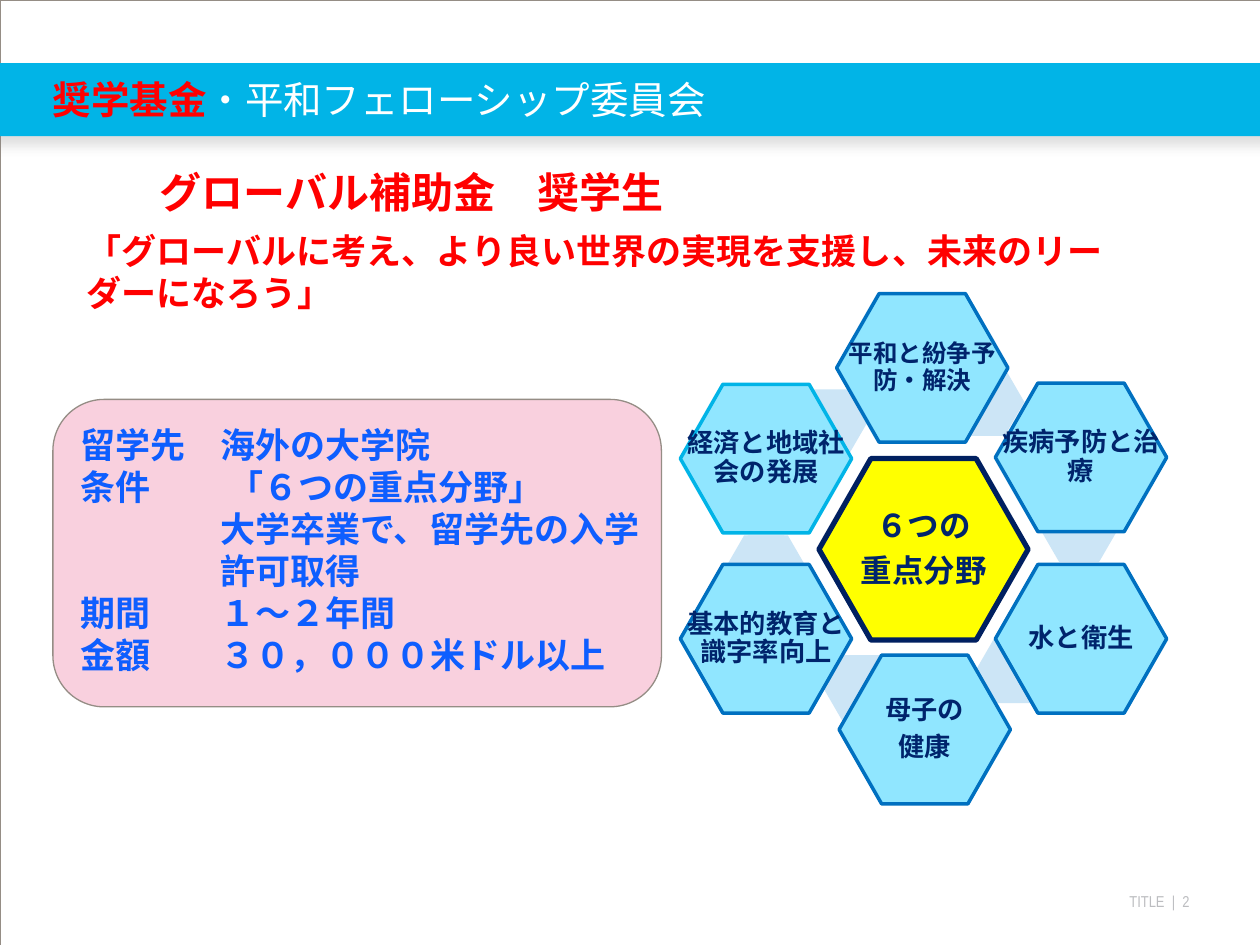
from lxml.etree import SubElement
from pptx import Presentation
from pptx.dml.color import RGBColor
from pptx.enum.shapes import MSO_SHAPE
from pptx.enum.text import MSO_ANCHOR, PP_ALIGN
from pptx.oxml.ns import qn
from pptx.util import Inches, Pt

LABEL_WIDTH = 1.11
LINK_SIZE = (0.63, 0.54)
AREA_SIZE = (1.36, 1.18)
LINKS = [(6.25, 3.09), (5.75, 4.25), (7.5, 2.92), (8.25, 3.92),
         (7.75, 5.04), (6.54, 5.2), (5.78, 4.25)]
AREAS = [
    (6.64, 2.33, ["平和と紛争予防・解決"], 14, "0070C0"),
    (7.9, 3.04, ["疾病予防と治療"], 15, "0070C0"),
    (7.9, 4.48, ["水と衛生"], 15, "0070C0"),
    (6.66, 5.2, ["母子の", "健康"], 15, "0070C0"),
    (5.4, 4.48, ["基本的教育と識字率向上"], 15, "0070C0"),
    (5.4, 3.05, ["経済と地域社会の発展"], 15, "01B4E7"),
]
DETAILS = [
    "留学先\t海外の大学院",
    "条件\t 「６つの重点分野」",
    "\t大学卒業で、留学先の入学",
    "\t許可取得",
    "期間\t１～２年間",
    "金額\t３０，０００米ドル以上",
]


def rgb(color):
    """Turn a hex string into a colour."""
    return RGBColor.from_string(color)


def add_shape(s, kind, box, fill=None, line=None, width=1, adj=None):
    """Add a preset shape without a theme shadow."""
    sp = s.shapes.add_shape(kind, *map(Inches, box))
    sp.shadow.inherit = False
    if fill:
        sp.fill.solid()
        sp.fill.fore_color.rgb = rgb(fill)
    else:
        sp.fill.background()
    if line:
        sp.line.color.rgb = rgb(line)
        sp.line.width = Pt(width)
    else:
        sp.line.fill.background()
    if adj is not None:
        sp.adjustments[0] = adj
    return sp


def set_frame(tf, insets=(0, 0, 0, 0), anchor=MSO_ANCHOR.TOP):
    """Set wrapping, insets (left, top, right, bottom) and anchor."""
    tf.word_wrap = True
    tf.vertical_anchor = anchor
    tf.margin_left, tf.margin_top, tf.margin_right, tf.margin_bottom = map(Inches, insets)


def add_run(p, text, size, color, bold=True, font="Arial"):
    """Add one formatted run to a paragraph."""
    r = p.add_run()
    r.text = text
    r.font.size = Pt(size)
    r.font.name = font
    r.font.bold = bold
    r.font.color.rgb = rgb(color)


def add_text(s, box, runs, align=PP_ALIGN.LEFT, **frame):
    """Add a one-paragraph text box from run arguments."""
    tf = s.shapes.add_textbox(*map(Inches, box)).text_frame
    set_frame(tf, **frame)
    p = tf.paragraphs[0]
    p.alignment = align
    for run in runs:
        add_run(p, *run)


def add_paragraphs(tf, count):
    """Return the first paragraph of a frame followed by new ones."""
    return [tf.paragraphs[0]] + [tf.add_paragraph() for _ in range(count - 1)]


def add_hexagon(s, box, lines, size, fill, line, width):
    """Add a hexagon with a full-width centred label."""
    add_shape(s, MSO_SHAPE.HEXAGON, box, fill, line, width, 0.286)
    tf = s.shapes.add_textbox(*map(Inches, box)).text_frame
    set_frame(tf, (0.02,) * 4, MSO_ANCHOR.MIDDLE)
    for p, text in zip(add_paragraphs(tf, len(lines)), lines):
        p.alignment = PP_ALIGN.CENTER
        p.line_spacing = 0.9
        p.space_after = Pt(size * 0.35)
        add_run(p, text, size, "00246C", font="Calibri")


def add_band(s):
    """Add the title band with its soft shadow."""
    sp = add_shape(s, MSO_SHAPE.RECTANGLE, (-0.08, 0.5, 10.17, 0.58), "01B4E7")
    effects = sp._element.spPr.find(qn("a:effectLst"))
    shadow = SubElement(effects, qn("a:outerShdw"), blurRad=str(Pt(7)),
                        dist=str(Pt(4.8)), dir="5400000", rotWithShape="0")
    color = SubElement(shadow, qn("a:srgbClr"), val="808080")
    SubElement(color, qn("a:alpha"), val="25000")


def add_details(s):
    """Add the rounded card of labels and values on a tab stop."""
    sp = add_shape(s, MSO_SHAPE.ROUNDED_RECTANGLE, (0.42, 3.17, 4.83, 2.44),
                   "F9D0DE", "958D85", 0.75)
    tf = sp.text_frame
    set_frame(tf, (0.1, 0.05, 0, 0.11), MSO_ANCHOR.MIDDLE)
    for p, text in zip(add_paragraphs(tf, len(DETAILS)), DETAILS):
        p.alignment = PP_ALIGN.LEFT
        indent = Inches(LABEL_WIDTH)
        pPr = p._p.get_or_add_pPr()
        pPr.set("marL", str(indent))
        pPr.set("indent", str(-indent))
        tabs = SubElement(pPr, qn("a:tabLst"))
        SubElement(tabs, qn("a:tab"), pos=str(indent), algn="l")
        add_run(p, text, 20, "0E5EFF")


def add_focus_areas(s):
    """Add the ring of six areas around the centre hexagon."""
    for link in LINKS:
        add_shape(s, MSO_SHAPE.HEXAGON, link + LINK_SIZE, "CCE5F6", adj=0.289)
    add_hexagon(s, (6.5, 3.64, 1.66, 1.44), ["６つの", "重点分野"], 18,
                "FFFF00", "002060", 3)
    for left, top, lines, size, line in AREAS:
        add_hexagon(s, (left, top) + AREA_SIZE, lines, size, "90E6FF", line, 2)


def main():
    """Build the slide and save it."""
    prs = Presentation()
    prs.slide_width, prs.slide_height = Inches(10), Inches(7.5)
    s = prs.slides.add_slide(prs.slide_layouts[6])
    add_text(s, (7.75, 7.08, 1.69, 0.15),
             [("TITLE  |  2", 9, "BCBDC0", False, "Arial Narrow")], PP_ALIGN.RIGHT)
    add_shape(s, MSO_SHAPE.RECTANGLE, (0, 0, 10, 7.5), line="958D85", width=0.13)
    add_band(s)
    add_text(s, (0.46, 1.32, 8.96, 0.42),
             [("グローバル補助金　奨学生", 24, "FF0000")], insets=(0.81, 0, 0, 0))
    add_details(s)
    add_text(s, (0.59, 1.77, 8.66, 0.77),
             [("「グローバルに考え、より良い世界の実現を支援し、未来のリーダーになろう」", 20, "FF0000")],
             insets=(0.1, 0.05, 0.1, 0.05))
    add_focus_areas(s)
    add_text(s, (0.42, 0.5, 9.58, 0.58),
             [("奨学基金", 22, "FF0000", True, "Arial Narrow"),
              ("・平和フェローシップ委員会", 22, "FFFFFF", False, "Arial Narrow")],
             anchor=MSO_ANCHOR.MIDDLE)
    prs.save("out.pptx")


if __name__ == "__main__":
    main()
